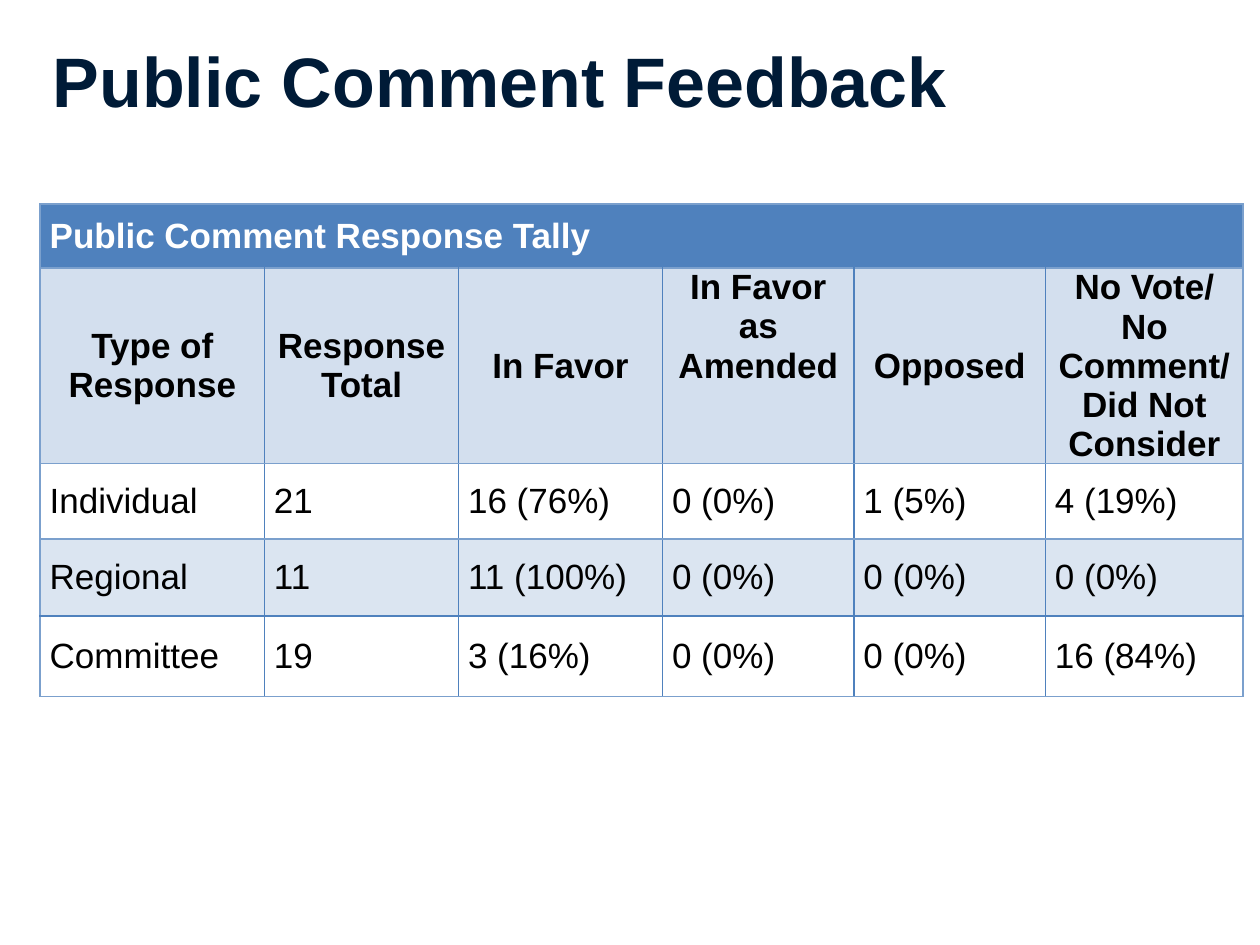
from dataclasses import dataclass

from lxml.etree import SubElement
from pptx import Presentation
from pptx.dml.color import RGBColor as Color
from pptx.enum.text import MSO_ANCHOR as Anchor, MSO_AUTO_SIZE as AutoSize, PP_ALIGN as Align
from pptx.oxml.ns import qn
from pptx.util import Pt


@dataclass(frozen=True)
class Theme:
    """Colours and type sizes of the slide."""
    font: str = "Arial"
    title: str = "001B37"
    banner: str = "4F81BD"
    header: str = "D3DFEE"
    plain: str = "FFFFFF"
    band: str = "DBE5F1"
    text: str = "000000"
    outer: str = "7BA0CD"
    inner: str = "4F81BD"
    title_size: int = 40
    table_size: int = 20


THEME = Theme()
COLUMNS = [128.2, 110.9, 116.6, 109.4, 109.4, 113]
HEIGHTS = [36.7, 91.4, 43.2, 43.9, 46.1]
ROWS = [
    ["Public Comment Response Tally", "", "", "", "", ""],
    ["Type of Response", "Response Total", "In Favor", "In Favor as Amended", "Opposed",
     "No Vote/\nNo Comment/ Did Not Consider"],
    ["Individual", "21", "16 (76%)", "0 (0%)", "1 (5%)", "4 (19%)"],
    ["Regional", "11", "11 (100%)", "0 (0%)", "0 (0%)", "0 (0%)"],
    ["Committee", "19", "3 (16%)", "0 (0%)", "0 (0%)", "16 (84%)"],
]
FILLS = [THEME.banner, THEME.header, THEME.plain, THEME.band, None]
EDGES = [THEME.outer] * 4 + [THEME.inner, THEME.outer]


def apply(target, values):
    """Set each named attribute of the target."""
    for name, value in values.items():
        setattr(target, name, value)


def write(frame, text, align, size, color, bold):
    """Fill a text frame with uniformly styled paragraphs."""
    frame.text = text
    for para in frame.paragraphs:
        para.alignment = align
        for span in para.runs:
            apply(span.font, {"name": THEME.font, "size": Pt(size), "bold": bold})
            span.font.color.rgb = Color.from_string(color)


def add_borders(cell, colors):
    """Draw one-point left, right, top and bottom cell borders."""
    properties = cell._tc.get_or_add_tcPr()
    for side, color in zip("LRTB", colors):
        line = SubElement(properties, qn(f"a:ln{side}"), w=str(Pt(1)))
        SubElement(SubElement(line, qn("a:solidFill")), qn("a:srgbClr"), val=color)


def fill_cell(cell, row, column):
    """Write and format one cell by its place in the tally."""
    last = len(COLUMNS) - 1
    left = THEME.outer if row == 0 or column == 0 else THEME.inner
    right = THEME.outer if row == 0 or column == last else THEME.inner
    add_borders(cell, [left, right, EDGES[row], EDGES[row + 1]])
    if FILLS[row]:
        cell.fill.solid()
        cell.fill.fore_color.rgb = Color.from_string(FILLS[row])
    else:
        cell.fill.background()
    amended = (row, column) == (1, 3)
    apply(cell, {
        "margin_left": Pt(5.4), "margin_right": Pt(5.4), "margin_top": 0, "margin_bottom": 0,
        "vertical_anchor": Anchor.TOP if amended else Anchor.MIDDLE,
    })
    write(cell.text_frame, ROWS[row][column], Align.CENTER if row == 1 else Align.JUSTIFY,
          THEME.table_size, THEME.plain if row == 0 else THEME.text, row < 2)


def add_tally(page, left, top):
    """Place the response table with its merged banner row."""
    frame = page.shapes.add_table(len(ROWS), len(COLUMNS), Pt(left), Pt(top),
                                  Pt(sum(COLUMNS)), Pt(sum(HEIGHTS)))
    table = frame.table
    apply(table, {"first_row": False, "horz_banding": False})
    for column, width in zip(table.columns, COLUMNS):
        column.width = Pt(width)
    for row, height in zip(table.rows, HEIGHTS):
        row.height = Pt(height)
    table.cell(0, 0).merge(table.cell(0, len(COLUMNS) - 1))
    for row in range(len(ROWS)):
        for column in range(len(COLUMNS)):
            fill_cell(table.cell(row, column), row, column)


def add_title(page, left, top, width, height):
    """Place the slide title in its placeholder."""
    title = page.shapes.title
    apply(title, {"left": Pt(left), "top": Pt(top), "width": Pt(width), "height": Pt(height)})
    apply(title.text_frame, {"vertical_anchor": Anchor.MIDDLE, "auto_size": AutoSize.NONE,
                             "word_wrap": True})
    write(title.text_frame, "Public Comment Feedback", Align.LEFT,
          THEME.title_size, THEME.title, True)


def main():
    """Build and save the deck."""
    deck = Presentation()
    apply(deck, {"slide_width": Pt(720), "slide_height": Pt(540)})
    page = deck.slides.add_slide(deck.slide_layouts[5])
    add_title(page, 23, 12.2, 688.3, 67)
    add_tally(page, 23, 116.6)
    deck.save("out.pptx")


if __name__ == "__main__":
    main()
